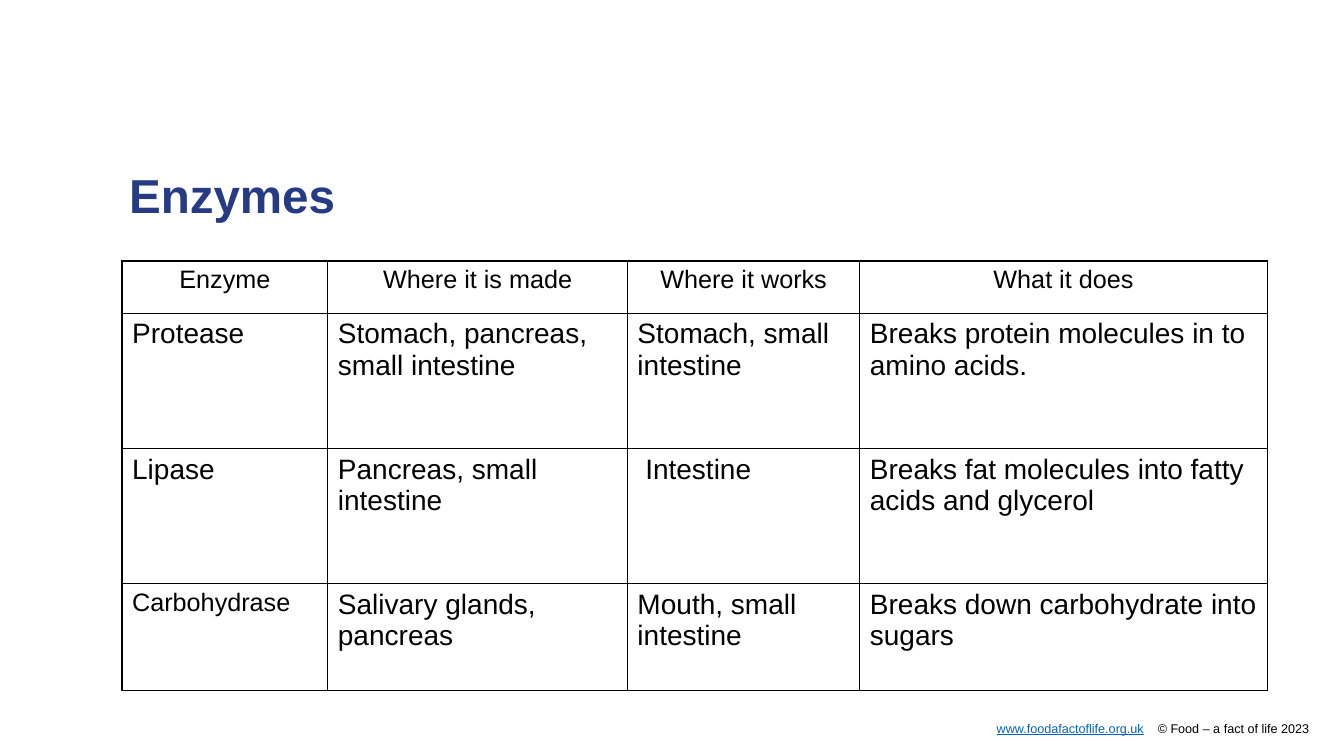
from lxml.etree import SubElement
from pptx import Presentation
from pptx.dml.color import RGBColor
from pptx.enum.text import MSO_ANCHOR, MSO_AUTO_SIZE, PP_ALIGN
from pptx.oxml.ns import qn
from pptx.util import Pt

BLACK = RGBColor(0x00, 0x00, 0x00)
NAVY = RGBColor(0x26, 0x3B, 0x83)
LINK_BLUE = RGBColor(0x05, 0x63, 0xC1)

COLUMN_WIDTHS = [147, 214, 166, 291]
ROW_HEIGHTS = [37.5, 96.5, 96.5, 76.5]
ENZYME_ROWS = [
    ["Enzyme", "Where it is made", "Where it works", "What it does"],
    ["Protease", "Stomach, pancreas, small intestine", "Stomach, small intestine",
     "Breaks protein molecules in to amino acids."],
    ["Lipase", "Pancreas, small intestine", " Intestine",
     "Breaks fat molecules into fatty acids and glycerol"],
    ["Carbohydrase", "Salivary glands, pancreas", "Mouth, small intestine",
     "Breaks down carbohydrate into sugars"],
]


def add_span(para, text, size, color=BLACK, bold=False, underline=False, spacing=0):
    span = para.add_run()
    span.text = text
    font = span.font
    font.name, font.size, font.bold, font.underline = "Arial", Pt(size), bold, underline
    font.color.rgb = color
    if spacing:
        span._r.get_or_add_rPr().set("spc", str(round(spacing * 100)))


def add_borders(cell, width):
    properties = cell._tc.get_or_add_tcPr()
    for index, side in enumerate(("lnL", "lnR", "lnT", "lnB")):
        line = SubElement(properties, qn(f"a:{side}"), w=str(Pt(width)))
        fill = SubElement(line, qn("a:solidFill"))
        SubElement(fill, qn("a:srgbClr"), val=str(BLACK))
        properties.remove(line)
        properties.insert(index, line)


class SlideBuilder:
    def __init__(self, deck):
        self.slide = deck.slides.add_slide(deck.slide_layouts[5])

    def prepare_frame(self, frame, anchor=MSO_ANCHOR.TOP):
        frame.margin_left = frame.margin_right = frame.margin_top = frame.margin_bottom = 0
        frame.word_wrap = True
        frame.auto_size = MSO_AUTO_SIZE.NONE
        frame.vertical_anchor = anchor
        return frame.paragraphs[0]

    def title(self, text, left, top, width, height):
        box = self.slide.shapes.title
        box.left, box.top, box.width, box.height = map(Pt, (left, top, width, height))
        para = self.prepare_frame(box.text_frame)
        para.alignment = PP_ALIGN.LEFT
        para.line_spacing = 0.9
        add_span(para, text, size=34, color=NAVY, bold=True)

    def footer(self, link, notice, left, top, width, height):
        box = self.slide.shapes.add_textbox(*map(Pt, (left, top, width, height)))
        para = self.prepare_frame(box.text_frame)
        para.alignment = PP_ALIGN.RIGHT
        add_span(para, link, size=9, color=LINK_BLUE, underline=True)
        add_span(para, " ", size=9, spacing=7.5)
        add_span(para, notice, size=9)

    def table(self, rows, left, top, widths, heights):
        frame = self.slide.shapes.add_table(
            len(rows), len(widths), Pt(left), Pt(top), Pt(sum(widths)), Pt(sum(heights)))
        table = frame.table
        table.first_row = table.horz_banding = False
        for column, width in zip(table.columns, widths):
            column.width = Pt(width)
        for row_index, (row, height) in enumerate(zip(table.rows, heights)):
            row.height = Pt(height)
            for cell, text in zip(row.cells, rows[row_index]):
                self.cell(cell, text, header=row_index == 0)

    def cell(self, cell, text, header):
        cell.fill.background()
        cell.margin_left = cell.margin_right = Pt(7.2)
        cell.margin_top = cell.margin_bottom = Pt(3.6)
        cell.vertical_anchor = MSO_ANCHOR.TOP
        add_borders(cell, width=1)
        para = cell.text_frame.paragraphs[0]
        para.alignment = PP_ALIGN.CENTER if header else PP_ALIGN.LEFT
        add_span(para, text, size=18 if header or text == "Carbohydrase" else 20)


def main():
    deck = Presentation()
    deck.slide_width, deck.slide_height = Pt(960), Pt(540)
    builder = SlideBuilder(deck)

    # Footer
    builder.footer("www.foodafactoflife.org.uk", "© Food – a fact of life 2023",
                   left=90.7, top=514.8, width=844.5, height=10.8)
    # Title
    builder.title("Enzymes", left=92.2, top=123.1, width=765.4, height=56.9)
    # Enzyme table
    builder.table(ENZYME_ROWS, left=87.2, top=186.5,
                  widths=COLUMN_WIDTHS, heights=ROW_HEIGHTS)

    deck.save("out.pptx")


if __name__ == "__main__":
    main()
